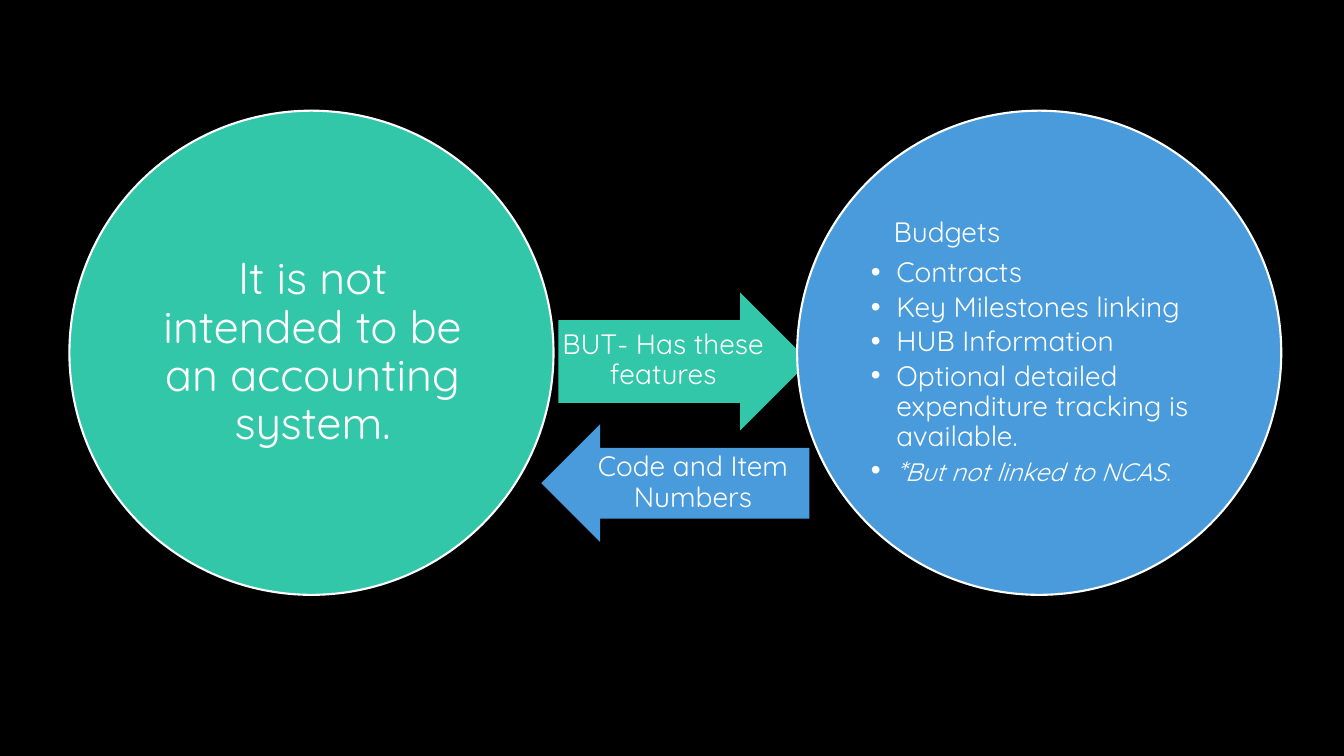
from lxml import etree
from pptx import Presentation
from pptx import util as u
from pptx.dml.color import RGBColor
from pptx.enum import shapes, text
from pptx.oxml import ns

COLOURS = {"black": "000000", "white": "FFFFFF", "green": "32C7A9", "blue": "4A9BDC"}


class FeatureSlide:
    """Holds the style and the current slide, and draws circles, arrows and text."""

    def __init__(self, deck, font="Quicksand"):
        self.font = font
        self.page = deck.slides.add_slide(deck.slide_layouts[6])
        self.paint(self.page.background.fill, "black")

    def paint(self, fill, colour):
        fill.solid()
        fill.fore_color.rgb = RGBColor.from_string(COLOURS[colour])

    def shape(self, kind, place, colour):
        shape = self.page.shapes.add_shape(kind, *map(u.Cm, place))
        shape.shadow.inherit = False
        self.paint(shape.fill, colour)
        return shape

    def circle(self, left, top, size, colour):
        circle = self.shape(shapes.MSO_SHAPE.OVAL, (left, top, size, size), colour)
        self.paint(circle.line.fill, "white")
        circle.line.width = u.Pt(1.5)

    def arrow(self, place, colour, rotation=0):
        arrow = self.shape(shapes.MSO_SHAPE.RIGHT_ARROW, place, colour)
        arrow.adjustments[0] = 0.6
        arrow.line.fill.background()
        arrow.rotation = rotation

    def box(self, place, inset=0):
        frame = self.page.shapes.add_textbox(*map(u.Cm, place)).text_frame
        margins = {f"margin_{side}": u.Cm(inset) for side in ("left", "top", "right", "bottom")}
        formats = {"word_wrap": True, "vertical_anchor": text.MSO_ANCHOR.MIDDLE, **margins}
        for name, value in formats.items():
            setattr(frame, name, value)
        return frame

    def para(self, frame, spans, after, align=text.PP_ALIGN.LEFT, margin=0, bullet=False):
        para = frame.paragraphs[0]
        if para.runs:
            para = frame.add_paragraph()
        layout = para._p.get_or_add_pPr()
        layout.set("marL", str(u.Cm(margin)))
        layout.set("indent", str(-u.Cm(margin) if bullet else 0))
        if bullet:
            etree.SubElement(layout, ns.qn("a:buFont")).set("typeface", "Arial")
            etree.SubElement(layout, ns.qn("a:buChar")).set("char", "•")
        formats = {"alignment": align, "line_spacing": 0.9, "space_after": u.Pt(after)}
        for name, value in formats.items():
            setattr(para, name, value)
        for wording, size, italic in spans:
            span = para.add_run()
            span.text = wording
            formats = {"name": self.font, "size": u.Pt(size), "italic": italic}
            for name, value in formats.items():
                setattr(span.font, name, value)
            self.paint(span.font.fill, "white")

    def label(self, place, wording, size, inset=0):
        frame = self.box(place, inset)
        self.para(frame, [(wording, size, False)], size * 0.35, text.PP_ALIGN.CENTER)

    def features(self, place, heading, items):
        frame = self.box(place, 0.08)
        self.para(frame, [(heading, 20, False)], 7, margin=0.57)
        for spans in items:
            self.para(frame, spans, 3, margin=0.64, bullet=True)


def main():
    deck = Presentation()
    deck.slide_width, deck.slide_height = u.Cm(33.87), u.Cm(19.05)
    slide = FeatureSlide(deck)

    slide.circle(1.75, 2.79, 12.2, "green")
    slide.label((3.56, 4.57, 8.64, 8.64), "It is not intended to be an accounting system.", 32, 0.1)
    slide.arrow((14.07, 7.37, 6.32, 3.48), "green")
    slide.label((14.07, 8.05, 5.28, 2.08), "BUT- Has these features", 20)

    slide.circle(20.09, 2.79, 12.2, "blue")
    plain = ["Contracts", "Key Milestones linking", "HUB Information",
             "Optional detailed expenditure tracking is available."]
    items = [[(wording, 20, False)] for wording in plain]
    items.append([("*", 20, True), ("But not linked to NCAS", 18, True), (".", 18, False)])
    slide.features((21.87, 4.57, 8.64, 8.64), "Budgets", items)
    slide.arrow((13.64, 10.69, 6.76, 2.97), "blue", rotation=180)
    slide.label((14.53, 11.28, 5.87, 1.78), "Code and Item Numbers", 20)

    deck.save("out.pptx")


if __name__ == "__main__":
    main()
